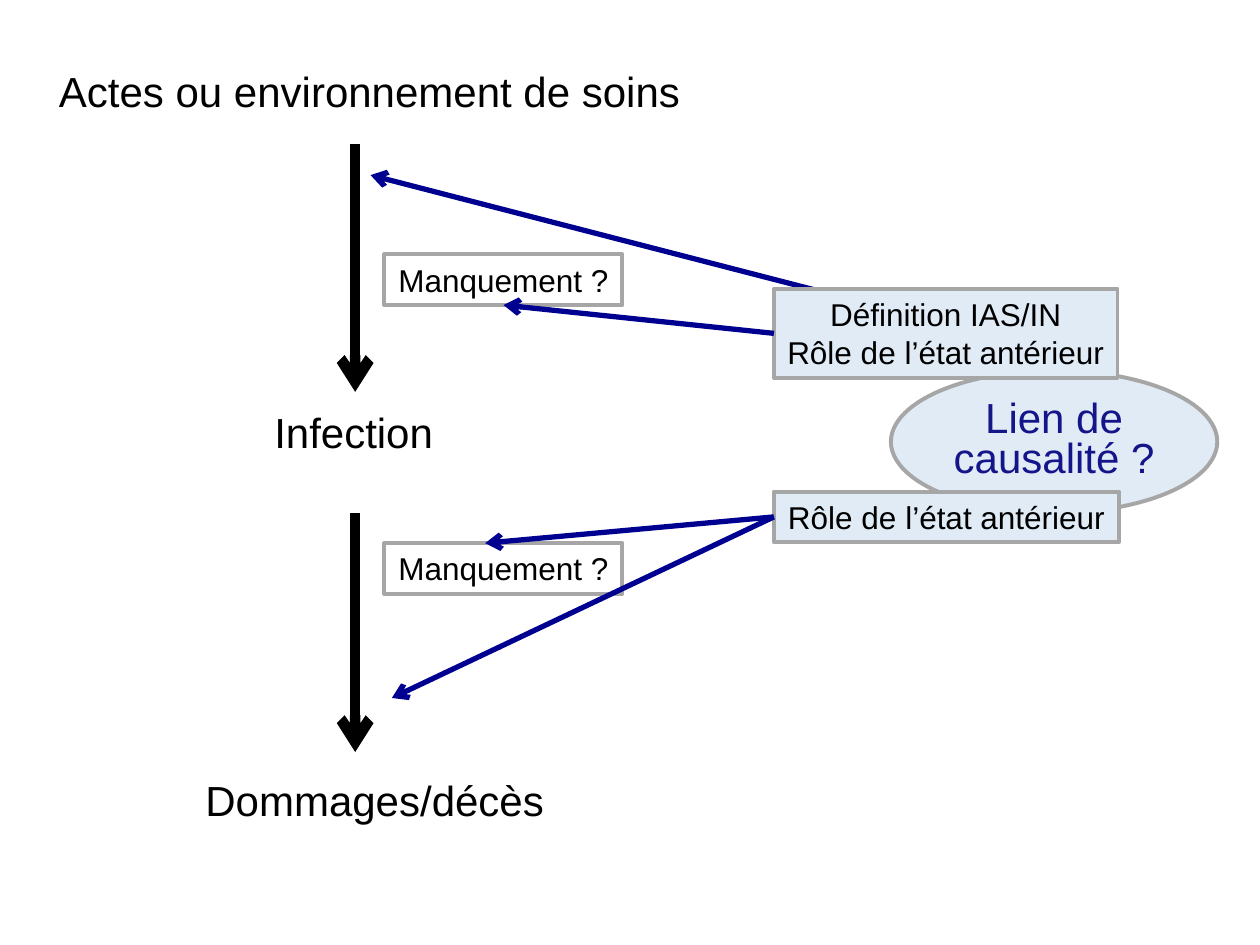
from lxml import etree
from pptx import Presentation
from pptx import util as u
from pptx.dml.color import RGBColor
from pptx.enum import shapes, text
from pptx.oxml.ns import qn

BLACK = RGBColor(0x00, 0x00, 0x00)
GREY = RGBColor(0xA6, 0xA6, 0xA6)
PALE_BLUE = RGBColor(0xE0, 0xEB, 0xF6)
LINK_BLUE = RGBColor(0x00, 0x00, 0x90)
TITLE_BLUE = RGBColor(0x15, 0x15, 0x8A)


def write(frame, lines, size, color=BLACK, align=text.PP_ALIGN.CENTER, spacing=None):
    """Fill a text frame with one paragraph per line."""
    frame.text = "\n".join(lines)
    for paragraph in frame.paragraphs:
        paragraph.alignment = align
        paragraph.line_spacing = spacing
        paragraph.font.name = "Arial"
        paragraph.font.size = u.Pt(size)
        paragraph.font.color.rgb = color


def fit(frame):
    """Let the shape follow its unwrapped text."""
    frame.word_wrap = False
    frame.vertical_anchor = text.MSO_ANCHOR.TOP
    frame.auto_size = text.MSO_AUTO_SIZE.SHAPE_TO_FIT_TEXT


def add_arrow(slide, start, end, color, width):
    """Draw a straight arrow between two points in centimetres."""
    arrow = slide.shapes.add_connector(
        shapes.MSO_CONNECTOR.STRAIGHT, *map(u.Cm, (*start, *end)))
    arrow.line.color.rgb = color
    arrow.line.width = u.Pt(width)
    etree.SubElement(arrow.line._get_or_add_ln(), qn("a:tailEnd"), type="arrow")
    etree.SubElement(arrow._element.spPr, qn("a:effectLst"))
    return arrow


def add_outlined(slide, kind, box, fill=None):
    """Add a grey-outlined shape in a box given in centimetres."""
    shape = slide.shapes.add_shape(kind, *map(u.Cm, box))
    shape.shadow.inherit = False
    if fill is None:
        shape.fill.background()
    else:
        shape.fill.solid()
        shape.fill.fore_color.rgb = fill
    shape.line.color.rgb = GREY
    shape.line.width = u.Pt(2.25)
    return shape


def add_label(slide, box, lines, fill=None):
    """Add a rectangle that holds centred lines."""
    label = add_outlined(slide, shapes.MSO_SHAPE.RECTANGLE, box, fill)
    write(label.text_frame, lines, 18)
    fit(label.text_frame)
    return label


def add_care_chain(slide, left, top):
    """Place the chain from care to harm with its two thick arrows."""
    stages = (("Actes ou environnement de soins", 0, 0, 13.18),
              ("Infection", 4.34, 6.89, 3.73),
              ("Dommages/décès", 2.95, 14.3, 7.39))
    for name, dx, dy, width in stages:
        stage = slide.shapes.add_textbox(
            *map(u.Cm, (left + dx, top + dy, width, 1.27)))
        write(stage.text_frame, [name], 24, align=text.PP_ALIGN.LEFT)
        fit(stage.text_frame)
    axis = left + 6.22
    for begin, end in ((1.71, 6.71), (9.15, 13.97)):
        add_arrow(slide, (axis, top + begin), (axis, top + end), BLACK, 6)


def add_causality(slide, left, top):
    """Place the causality question with the two criteria around it."""
    question = add_outlined(slide, shapes.MSO_SHAPE.OVAL,
                            (left + 2.36, top + 1.65, 6.58, 2.87), PALE_BLUE)
    question.text_frame.word_wrap = True
    write(question.text_frame, ["Lien de causalité ?"], 24, TITLE_BLUE, spacing=0.8)
    add_arrow(slide, (left + 3.48, top + 0.71), (left - 8.13, top - 2.29), LINK_BLUE, 3)
    prior_state = "Rôle de l’état antérieur"
    definition = add_label(slide, (left, top, 6.93, 1.8),
                           ["Définition IAS/IN", prior_state], PALE_BLUE)
    role = add_label(slide, (left, top + 4.09, 6.96, 1.02), [prior_state], PALE_BLUE)
    return definition, role


def add_breaches(slide, left, top):
    """Place one breach question beside each thick arrow."""
    return [add_label(slide, (left, top + dy, 4.8, 1.02), ["Manquement ?"])
            for dy in (0, 5.82)]


def add_links(slide, definition, role, breach):
    """Lead from the criteria to the breaches and the second step."""
    to_breach = add_arrow(slide, (15.6, 6.72), (10.15, 6.15), LINK_BLUE, 3)
    to_breach.begin_connect(definition, 1)
    to_breach.end_connect(breach, 2)
    for end in ((9.78, 10.95), (7.9, 14.07)):
        add_arrow(slide, (15.6, 10.42), end, LINK_BLUE, 3).begin_connect(role, 1)


def main():
    """Build and save the slide."""
    deck = Presentation()
    deck.slide_width, deck.slide_height = u.Cm(25.4), u.Cm(19.05)
    slide = deck.slides.add_slide(deck.slide_layouts[6])
    add_care_chain(slide, 0.94, 1.19)
    definition, role = add_causality(slide, 15.6, 5.82)
    first_breach, _ = add_breaches(slide, 7.75, 5.13)
    add_links(slide, definition, role, first_breach)
    deck.save("out.pptx")


if __name__ == "__main__":
    main()
